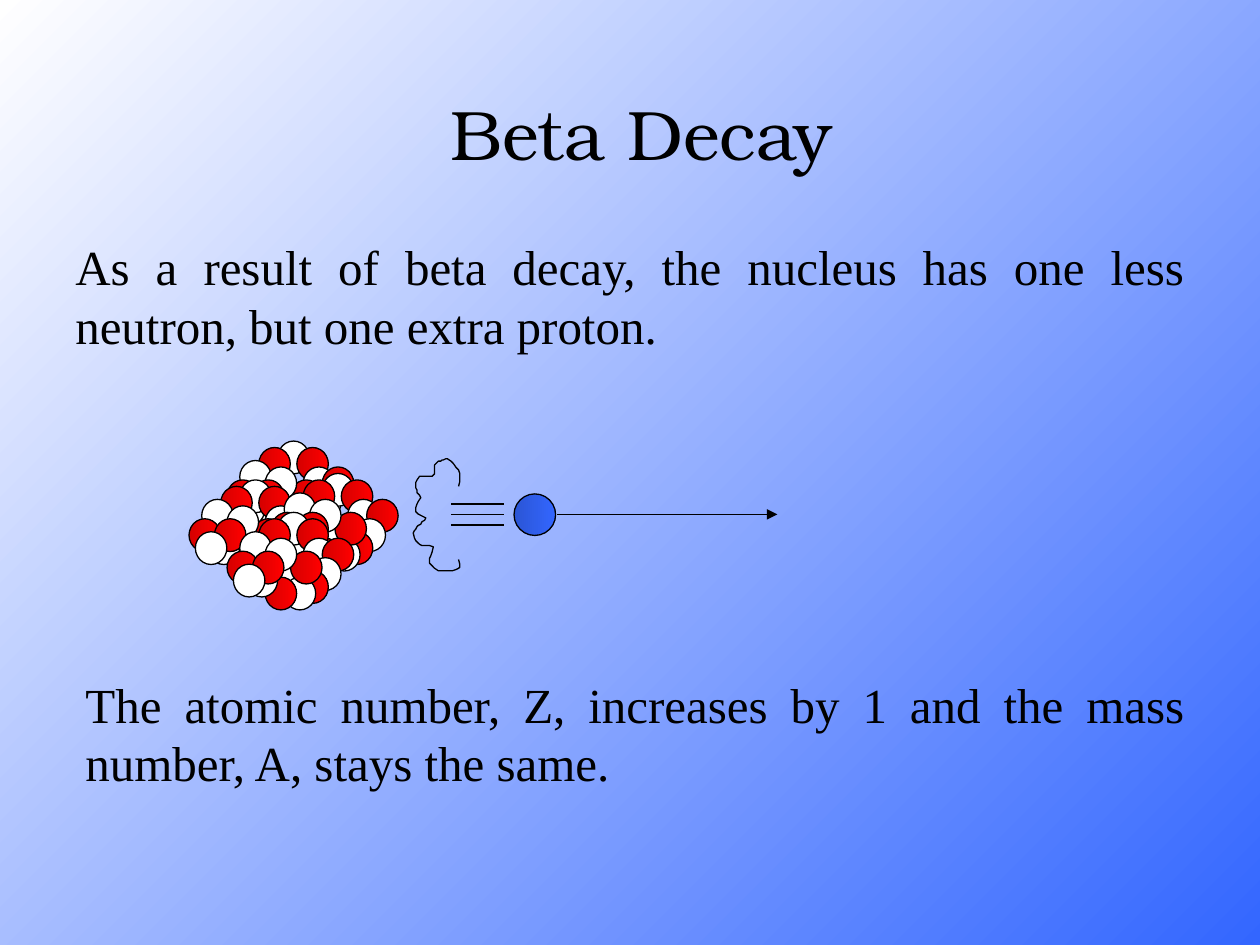
from dataclasses import dataclass

from lxml.etree import SubElement
from pptx import Presentation
from pptx.dml.color import RGBColor
from pptx.enum.shapes import MSO_CONNECTOR as Connector, MSO_SHAPE as Preset
from pptx.enum.text import MSO_AUTO_SIZE as AutoSize, PP_ALIGN as Align
from pptx.oxml.ns import qn
from pptx.util import Inches, Pt


@dataclass(frozen=True)
class Theme:
    ink: str = "000000"
    backdrop: tuple = ("FFFFFF", "3366FF")
    neutron: tuple = ("FFFFFF",)
    proton: tuple = ("D50000", "FF0000")
    electron: tuple = ("2B55D5", "3366FF")
    title_font: str = "TeX Gyre Bonum"
    body_font: str = "Times New Roman"
    title_size: int = 40
    body_size: int = 28
    line: float = 0.75


THEME = Theme()
WIDTH, HEIGHT = Inches(10), Inches(7.5)

# Boxes are left, top, width, height in percent of the slide.
TITLE = ("Beta Decay", (34.8, 8.93, 32.6, 10.27))
STATEMENTS = [
    ("As a result of beta decay, the nucleus has one less neutron, "
     "but one extra proton.", (5, 24.4, 90, 13.73)),
    ("The atomic number, Z, increases by 1 and the mass number, A, "
     "stays the same.", (5.8, 70.67, 89.2, 13.73)),
]

# One cluster of nucleons (column, row), back to front; it recurs at each origin.
CLUSTER = [
    ("neutron", 8, 0), ("proton", 11, 1), ("neutron", 12, 4), ("proton", 5, 1),
    ("neutron", 6, 7), ("proton", 4, 5), ("neutron", 2, 3), ("proton", 15, 4),
    ("neutron", 13, 7), ("proton", 11, 9), ("neutron", 9, 10), ("proton", 6, 10),
    ("neutron", 3, 8), ("proton", 0, 6), ("proton", 10, 6), ("neutron", 6, 4),
    ("proton", 4, 6), ("neutron", 1, 8),
]
CLUSTER_ORIGINS = [(6, 0), (0, 6), (13, 5), (6, 11)]
ABSENT = ("proton", 12, 10)
NUCLEUS_LEFT, NUCLEUS_TOP = 15, 46.67
COLUMN, ROW = 14.1 / 28, 14.4 / 21
NUCLEON = (2.5, 3.47)

ELECTRON = (40.8, 52.27, 3.3, 4.4)
FLIGHT_Y = 54.44
FLIGHT_X = (44.2, 61.7)
STREAK_X = (35.8, 40)
STREAK_GAP = 1.11

# Recoil outline in hundredths of an inch: a start, then control, control, end.
RECOIL_START = (364, 386)
RECOIL_CURVES = [
    ((368, 375), (363, 370), (355, 364)),
    ((352, 365), (347, 366), (345, 369)),
    ((344, 371), (346, 375), (344, 377)),
    ((341, 379), (336, 378), (333, 378)),
    ((328, 386), (330, 388), (334, 395)),
    ((329, 403), (326, 407), (338, 411)),
    ((334, 416), (330, 418), (328, 423)),
    ((331, 434), (334, 432), (344, 434)),
    ((340, 445), (338, 446), (348, 453)),
    ((357, 452), (370, 455), (364, 444)),
]
CURVE_STEPS = 8


def across(percent):
    return round(WIDTH * percent / 100)


def down(percent):
    return round(HEIGHT * percent / 100)


def place(box):
    left, top, width, height = box
    return across(left), down(top), across(width), down(height)


def paint(fill, colors, angle=0):
    """One colour gives a solid fill, two a linear gradient."""
    if len(colors) == 1:
        fill.solid()
        fill.fore_color.rgb = RGBColor.from_string(colors[0])
        return
    fill.gradient()
    fill.gradient_angle = angle
    for stop, color in zip(fill.gradient_stops, colors):
        stop.color.rgb = RGBColor.from_string(color)


def outline(line):
    line.color.rgb = RGBColor.from_string(THEME.ink)
    line.width = Pt(THEME.line)


def add_text(shapes, words, box, font, size, align=None, wrap=True):
    frame = shapes.add_textbox(*place(box)).text_frame
    frame.word_wrap = wrap
    frame.auto_size = AutoSize.SHAPE_TO_FIT_TEXT
    paragraph = frame.paragraphs[0]
    paragraph.alignment = align
    run = paragraph.add_run()
    run.text = words
    run.font.name = font
    run.font.size = Pt(size)
    run.font.color.rgb = RGBColor.from_string(THEME.ink)


def add_particle(shapes, box, colors):
    particle = shapes.add_shape(Preset.OVAL, *place(box))
    particle.shadow.inherit = False
    paint(particle.fill, colors)
    outline(particle.line)


def add_level_line(shapes, ends, y, arrow=False):
    start, end = ends
    level = shapes.add_connector(Connector.STRAIGHT, across(start), down(y),
                                 across(end), down(y))
    outline(level.line)
    if arrow:
        SubElement(level.line._get_or_add_ln(), qn("a:tailEnd"), type="triangle")
    SubElement(level._element.spPr, qn("a:effectLst"))


def add_nucleus(shapes):
    for origin_column, origin_row in CLUSTER_ORIGINS:
        for kind, column, row in CLUSTER:
            column, row = origin_column + column, origin_row + row
            if (kind, column, row) != ABSENT:
                box = (NUCLEUS_LEFT + column * COLUMN,
                       NUCLEUS_TOP + row * ROW, *NUCLEON)
                add_particle(shapes, box, getattr(THEME, kind))


def bezier(points, t):
    weights = ((1 - t) ** 3, 3 * t * (1 - t) ** 2, 3 * t * t * (1 - t), t ** 3)
    return tuple(sum(w * p[axis] for w, p in zip(weights, points))
                 for axis in (0, 1))


def add_recoil(shapes):
    start, trace = RECOIL_START, []
    for curve in RECOIL_CURVES:
        trace += [bezier((start, *curve), step / CURVE_STEPS)
                  for step in range(1, CURVE_STEPS + 1)]
        start = curve[-1]
    builder = shapes.build_freeform(*RECOIL_START, scale=Inches(0.01))
    builder.add_line_segments(trace, close=False)
    recoil = builder.convert_to_shape()
    recoil.shadow.inherit = False
    recoil.fill.background()
    outline(recoil.line)


def add_emission(shapes):
    add_particle(shapes, ELECTRON, THEME.electron)
    add_level_line(shapes, FLIGHT_X, FLIGHT_Y, arrow=True)
    for step in (-1, 1, 0):
        add_level_line(shapes, STREAK_X, FLIGHT_Y + step * STREAK_GAP)
    add_recoil(shapes)


def main():
    deck = Presentation()
    deck.slide_width, deck.slide_height = WIDTH, HEIGHT
    slide = deck.slides.add_slide(deck.slide_layouts[6])
    paint(slide.background.fill, THEME.backdrop, angle=315)
    add_text(slide.shapes, *TITLE, THEME.title_font, THEME.title_size, wrap=False)
    for words, box in STATEMENTS:
        add_text(slide.shapes, words, box, THEME.body_font, THEME.body_size,
                 Align.JUSTIFY)
    add_nucleus(slide.shapes.add_group_shape().shapes)
    add_emission(slide.shapes.add_group_shape().shapes)
    deck.save("out.pptx")


if __name__ == "__main__":
    main()
